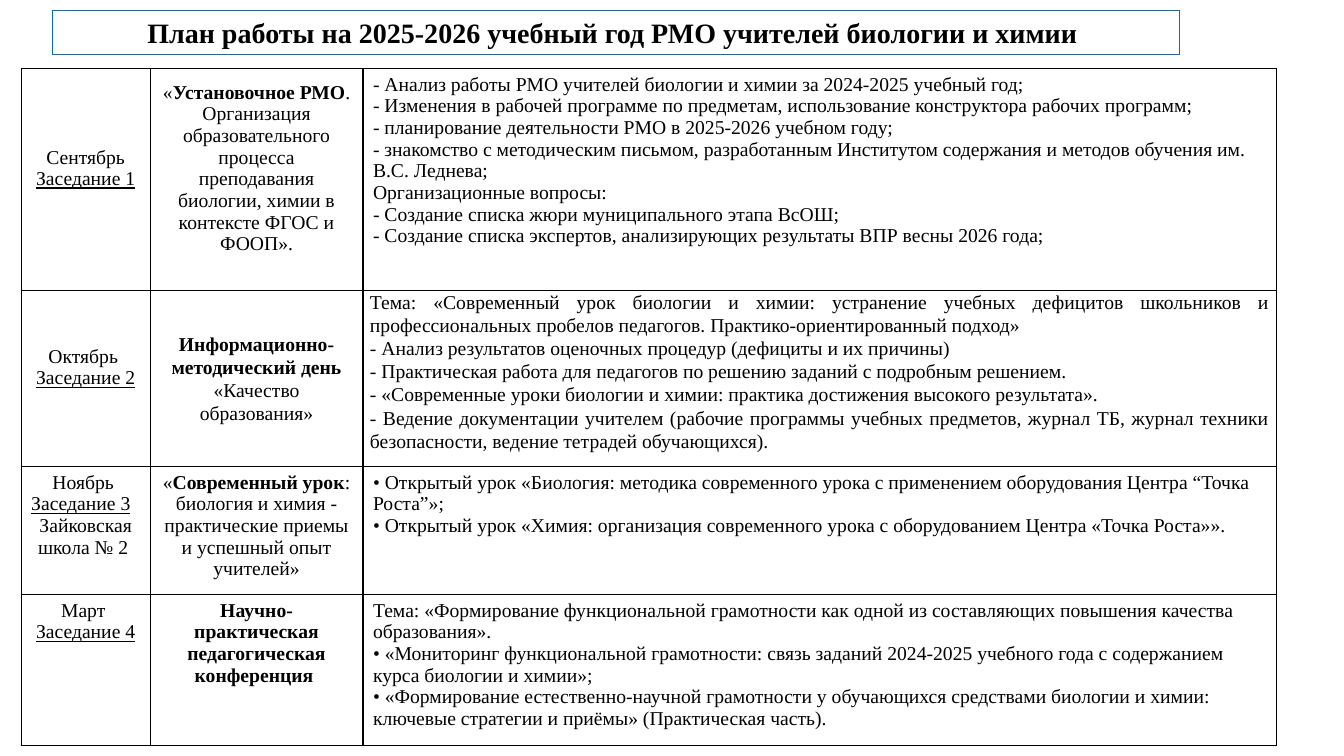
"""Builds the yearly work plan slide of the biology and chemistry teachers' association."""
import pptx
import pptx.dml.color
import pptx.enum.text
import pptx.oxml
import pptx.oxml.ns
import pptx.util

Inches, Pt = pptx.util.Inches, pptx.util.Pt
ALIGN, ANCHOR = pptx.enum.text.PP_ALIGN, pptx.enum.text.MSO_ANCHOR
BLACK = pptx.dml.color.RGBColor(0x00, 0x00, 0x00)
BLUE = pptx.dml.color.RGBColor(0x00, 0x70, 0xC0)
FONT = "Times New Roman"

TITLE = "План работы на 2025-2026 учебный год РМО учителей биологии и химии "
TITLE_BOX = (0.52, 0.1, 11.18, 0.44)
TABLE_CORNER = (0.21, 0.68)
COLUMNS = (1.28, 2.11, 9.06)
ROWS = (2.2, 1.75, 1.27, 1.5)

BOLD, UNDERLINE = {"bold": True}, {"underline": True}
CENTER, LEFT, JUSTIFY = ({"alignment": side} for side in (ALIGN.CENTER, ALIGN.LEFT, ALIGN.JUSTIFY))
SPACED = {"line_spacing": 1.07}
MIDDLE = {"vertical_anchor": ANCHOR.MIDDLE}
RAISED = MIDDLE | {"margin_bottom": Inches(0.27)}
TIGHT = {"margin_left": Inches(0.07), "margin_right": Inches(0.07), "margin_top": 0, "margin_bottom": 0}


def lines(style, *texts):
    """Gives every text the same paragraph format."""
    return [(style, [(text, {})]) for text in texts]


def meeting(month, number, style=CENTER):
    """Returns the month and the underlined meeting number."""
    return lines(CENTER, month) + [(style, [(f"Заседание {number}", UNDERLINE)])]


PLAN = [
    [
        (RAISED, meeting("Сентябрь", 1)),
        (RAISED, [
            (CENTER, [("«", {}), ("Установочное РМО", BOLD),
                      (". Организация образовательного процесса преподавания", {})]),
            *lines(CENTER, "биологии, химии в контексте ФГОС и ФООП»."),
        ]),
        ({}, lines(
            LEFT,
            "- Анализ работы РМО учителей биологии и химии за 2024-2025 учебный год;",
            "- Изменения в рабочей программе по предметам, использование конструктора рабочих программ;",
            "- планирование деятельности РМО в 2025-2026 учебном году;",
            "- знакомство с методическим письмом, разработанным Институтом содержания и методов обучения им. В.С. Леднева;",
            "Организационные вопросы:",
            "- Создание списка жюри муниципального этапа ВсОШ;",
            "- Создание списка экспертов, анализирующих результаты ВПР весны 2026 года;",
        )),
    ],
    [
        (RAISED, meeting("Октябрь ", 2)),
        (MIDDLE | TIGHT, [
            (CENTER | SPACED, [("Информационно-методический день ", BOLD), ("«Качество образования»", {})]),
        ]),
        (TIGHT, lines(
            JUSTIFY | SPACED,
            "Тема: «Современный урок биологии и химии: устранение учебных дефицитов школьников и профессиональных пробелов педагогов. Практико-ориентированный подход»",
            "- Анализ результатов оценочных процедур (дефициты и их причины)",
            "- Практическая работа для педагогов по решению заданий с подробным решением. ",
            "- «Современные уроки биологии и химии: практика достижения высокого результата». ",
            "- Ведение документации учителем (рабочие программы учебных предметов, журнал ТБ, журнал техники безопасности, ведение тетрадей обучающихся).",
        )),
    ],
    [
        ({}, meeting("Ноябрь ", 3, LEFT) + lines(CENTER, "Зайковская школа № 2 ")),
        ({}, [
            (CENTER, [("«", {}), ("Современный урок", BOLD),
                      (": биология и химия - практические приемы и успешный опыт учителей»", {})]),
        ]),
        ({}, lines(
            LEFT,
            "• Открытый урок «Биология: методика современного урока с применением оборудования Центра “Точка Роста”»;",
            "• Открытый урок «Химия: организация современного урока с оборудованием Центра «Точка Роста»».",
        )),
    ],
    [
        ({}, meeting("Март ", 4)),
        ({}, [(CENTER, [("Научно-практическая педагогическая конференция ", BOLD)])]),
        ({}, lines(
            LEFT,
            "Тема: «Формирование функциональной грамотности как одной из составляющих повышения качества образования».",
            "• «Мониторинг функциональной грамотности: связь заданий 2024-2025 учебного года с содержанием курса биологии и химии»;",
            "• «Формирование естественно-научной грамотности у обучающихся средствами биологии и химии: ключевые стратегии и приёмы» (Практическая часть).",
        )),
    ],
]


def apply(target, formats):
    """Sets each named attribute of the target."""
    for name, value in formats.items():
        setattr(target, name, value)


def write(frame, paragraphs, size):
    """Fills a text frame with formatted paragraphs."""
    for index, (style, spans) in enumerate(paragraphs):
        para = frame.add_paragraph() if index else frame.paragraphs[0]
        apply(para, style)
        for text, look in spans:
            span = para.add_run()
            span.text = text
            apply(span.font, {"name": FONT, "size": Pt(size), "bold": False} | look)
            span.font.color.rgb = BLACK


def outline(cell):
    """Draws a thin black border on all four sides of a cell."""
    properties = cell._tc.get_or_add_tcPr()
    for position, side in enumerate("LRTB"):
        properties.insert(position, pptx.oxml.parse_xml(
            f'<a:ln{side} {pptx.oxml.ns.nsdecls("a")} w="{Pt(1)}">'
            f'<a:solidFill><a:srgbClr val="{BLACK}"/></a:solidFill></a:ln{side}>'))


def add_title(page):
    """Places the framed heading."""
    box = page.shapes.title
    apply(box, dict(zip(("left", "top", "width", "height"), map(Inches, TITLE_BOX))))
    box.line.color.rgb = BLUE
    box.line.width = 0
    apply(box.text_frame, {"word_wrap": True, "auto_size": pptx.enum.text.MSO_AUTO_SIZE.NONE,
                           "vertical_anchor": ANCHOR.MIDDLE})
    write(box.text_frame, [(CENTER, [(TITLE, BOLD)])], 20)


def add_plan(page):
    """Places the table of meetings."""
    table = page.shapes.add_table(
        len(ROWS), len(COLUMNS), *map(Inches, TABLE_CORNER + (sum(COLUMNS), sum(ROWS)))).table
    apply(table, {"first_row": False, "horz_banding": False})
    for column, width in zip(table.columns, COLUMNS):
        column.width = Inches(width)
    for row, height, entries in zip(table.rows, ROWS, PLAN):
        row.height = Inches(height)
        for cell, (layout, paragraphs) in zip(row.cells, entries):
            apply(cell, layout)
            cell.fill.background()
            outline(cell)
            write(cell.text_frame, paragraphs, 14)


def main():
    """Builds and saves the deck."""
    deck = pptx.Presentation()
    apply(deck, {"slide_width": Inches(13.33), "slide_height": Inches(7.5)})
    page = deck.slides.add_slide(deck.slide_layouts.get_by_name("Title Only"))
    add_title(page)
    add_plan(page)
    deck.save("out.pptx")


if __name__ == "__main__":
    main()
